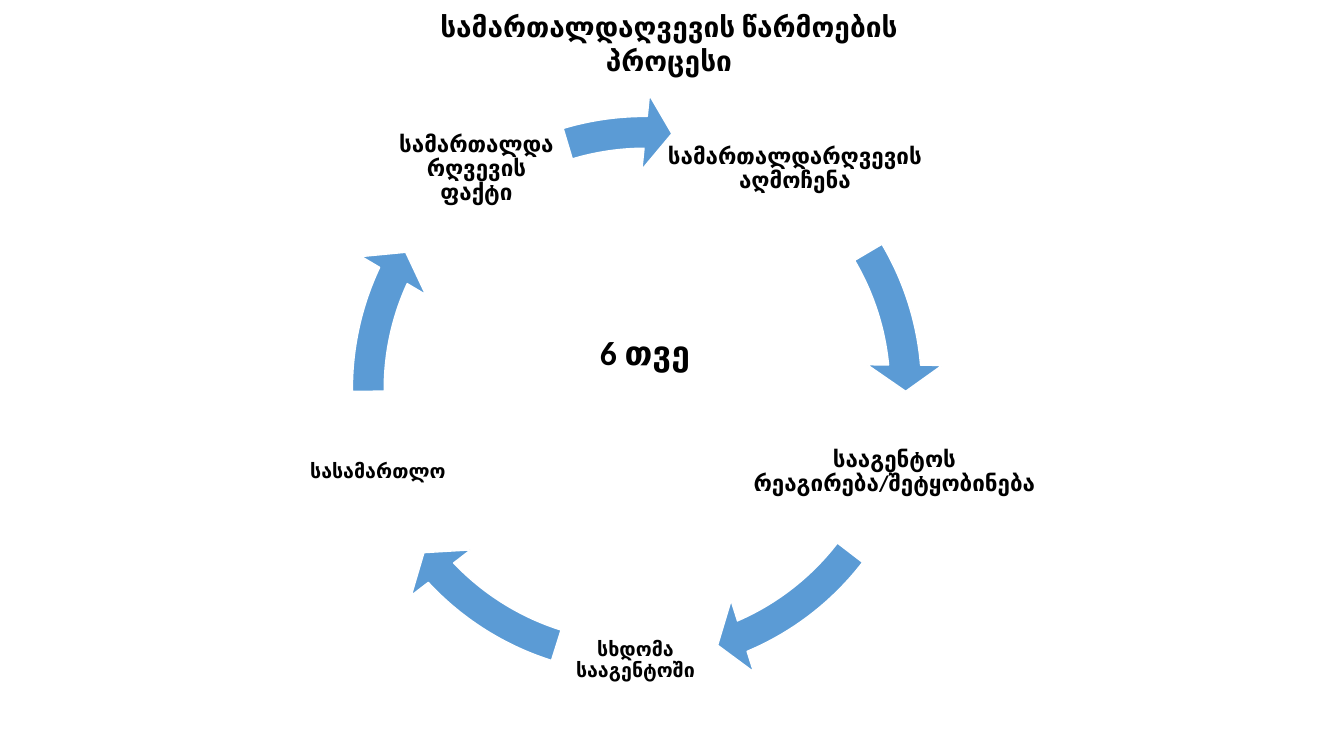
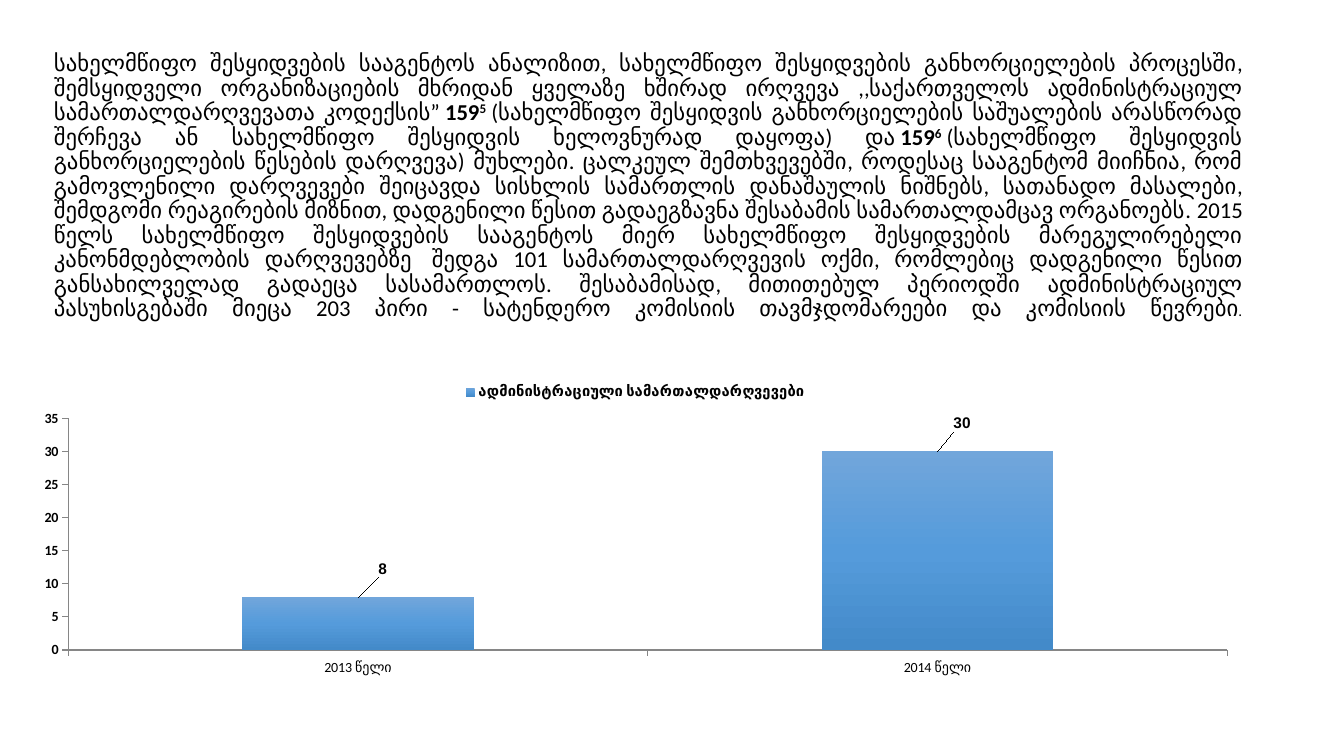
from copy import deepcopy

from lxml import etree
from pptx import Presentation
from pptx.chart.data import CategoryChartData
from pptx.dml.color import RGBColor
from pptx.enum.chart import XL_CHART_TYPE, XL_LABEL_POSITION, XL_LEGEND_POSITION, XL_TICK_MARK
from pptx.enum.shapes import MSO_SHAPE
from pptx.enum.text import MSO_ANCHOR, PP_ALIGN
from pptx.oxml.ns import qn
from pptx.util import Emu, Pt

COLUMNS = XL_CHART_TYPE.COLUMN_CLUSTERED
ABOVE_BAR = XL_LABEL_POSITION.OUTSIDE_END
LEGEND_TOP = XL_LEGEND_POSITION.TOP
TICK_OUT, TICK_NONE = XL_TICK_MARK.OUTSIDE, XL_TICK_MARK.NONE
ARROW = MSO_SHAPE.CIRCULAR_ARROW
TOP, MIDDLE = MSO_ANCHOR.TOP, MSO_ANCHOR.MIDDLE
CENTER, JUSTIFY = PP_ALIGN.CENTER, PP_ALIGN.JUSTIFY

EMU_PER_PX = 914400 / 100.8
FONT = "Calibri"
BLACK, WHITE, BLUE, GREY = "000000", "FFFFFF", "5B9BD5", "868686"
BAR_GRADIENT = ["71A6DB", "559BDB", "438AC9"]
NBSP = chr(160)


def px(length):
    return Emu(round(length * EMU_PER_PX))


def color(hex_string):
    return RGBColor.from_string(hex_string)


def set_font(font, size, bold=False, name=FONT):
    font.size, font.bold, font.name = Pt(size), bold, name
    font.color.rgb = color(BLACK)


def add_text(page, box, spans, size, bold=False, align=CENTER, anchor=TOP,
             line_spacing=None, inset=None):
    """Spans are a string, or a list of (text, format) pairs."""
    frame = page.shapes.add_textbox(*map(px, box)).text_frame
    frame.word_wrap, frame.vertical_anchor = True, anchor
    if inset is not None:
        frame.margin_left = frame.margin_right = px(inset)
        frame.margin_top = frame.margin_bottom = px(inset)
    para = frame.paragraphs[0]
    para.alignment = align
    if line_spacing:
        para.line_spacing = line_spacing
    for text, style in [(spans, {})] if isinstance(spans, str) else spans:
        if style.get("new_line"):
            para.add_line_break()
        span = para.add_run()
        span.text = text
        set_font(span.font, style.get("size", size), style.get("bold", bold))
        if "raised" in style:
            span.font._element.set("baseline", str(style["raised"] * 1000))
        if style.get("new_line"):
            # The break takes the format of the span that follows it
            span._r.getprevious().append(deepcopy(span.font._element))


def add_cycle_arrow(page, box, start, end):
    """Angles are degrees, clockwise from three o'clock."""
    arrow = page.shapes.add_shape(ARROW, *map(px, box))
    arrow.shadow.inherit = False
    arrow.fill.solid()
    arrow.fill.fore_color.rgb = color(BLUE)
    arrow.line.color.rgb = color(WHITE)
    arrow.line.width = Pt(1)
    unit = 0.6  # adjustment value of one degree
    for index, value in enumerate([0.052, 5.6 * unit, end * unit, start * unit, 0.061]):
        arrow.adjustments[index] = value


def add_cycle(page, box):
    left, top, size = box
    # Arrows: start, end, shift from the ring
    for start, end, right, down in [(329.43, 354.9, 0, 0), (37.55, 66.92, 0, 0),
                                    (107.48, 136.86, 0, 0), (179.51, 204.98, 0, 0),
                                    (253.3, 270.15, 8, 12)]:
        add_cycle_arrow(page, (left + right, top + down, size, size), start, end)
    # Steps: text, left and top within the ring, width, text size
    for text, right, down, width, points in [
            ("სამართალდარღვევის აღმოჩენა", 332, 5, 264, 16),
            ("სააგენტოს რეაგირება/შეტყობინება", 413, 308, 301, 16),
            ("სხდომა სააგენტოში", 223, 496, 163, 14),
            ("სასამართლო", -69, 308, 232, 14),
            ("სამართალდარღვევის ფაქტი", 64, 5, 163, 16)]:
        add_text(page, (left + right, top + down, width, 163), text, points, bold=True,
                 anchor=MIDDLE, line_spacing=0.9, inset=2)
    # Time limit in the middle
    add_text(page, (left + 235, top + 244, 158, 50), "6 თვე", 24, bold=True)


def set_layout(parent, index, **values):
    """Place a chart part by fractions of the chart."""
    for old in parent.findall(qn("c:layout")):
        parent.remove(old)
    layout = etree.Element(qn("c:layout"))
    manual = etree.SubElement(layout, qn("c:manualLayout"))
    for tag, value in values.items():
        etree.SubElement(manual, qn("c:" + tag)).set("val", str(value))
    parent.insert(index, layout)


def fill_gradient(series, stops):
    fill = series.format.fill
    fill.gradient()
    fill.gradient_angle = 270
    stop_list = next(series._element.iter(qn("a:gsLst")))
    stop_list.insert(1, deepcopy(stop_list[0]))
    for index, (stop, shade) in enumerate(zip(fill.gradient_stops, stops)):
        stop.color.rgb = color(shade)
        stop.position = index / (len(stops) - 1)


def add_offence_chart(page, box):
    chart_data = CategoryChartData()
    chart_data.categories = ["2013 წელი", "2014 წელი"]
    chart_data.add_series("ადმინისტრაციული სამართალდარღვევები", [8, 30])
    chart = page.shapes.add_chart(COLUMNS, *map(px, box), chart_data).chart
    set_font(chart.font, 10)
    chart.has_title = False
    chart.has_legend = True
    chart.legend.position = LEGEND_TOP
    chart.legend.include_in_layout = False
    set_font(chart.legend.font, 10.5, bold=True)
    # Axes
    for axis, bold in [(chart.category_axis, False), (chart.value_axis, True)]:
        axis.has_major_gridlines = False
        axis.major_tick_mark, axis.minor_tick_mark = TICK_OUT, TICK_NONE
        axis.format.line.color.rgb = color(GREY)
        set_font(axis.tick_labels.font, 10, bold=bold)
    chart.value_axis.minimum_scale, chart.value_axis.maximum_scale = 0, 35
    chart.value_axis.major_unit = 5
    plot_area = next(chart._chartSpace.iter(qn("c:plotArea")))
    set_layout(plot_area, 0, layoutTarget="inner", xMode="edge", yMode="edge",
               x=0.04, y=0.15, w=0.94, h=0.75)
    # Bars and their values
    plot = chart.plots[0]
    plot.gap_width, plot.vary_by_categories = 150, False
    series = plot.series[0]
    fill_gradient(series, BAR_GRADIENT)
    for index in range(2):
        label = series.points[index].data_label
        set_font(label.font, 11, bold=True, name="Arial")
        label.position = ABOVE_BAR
    for label_element in series._element.iter(qn("c:dLbl")):
        set_layout(label_element, 1, x=0.02, y=-0.05)


def build_process(page):
    add_cycle(page, (331, 83, 612))
    add_text(page, (407, 5, 524, 78), "სამართალდაღვევის წარმოების პროცესი", 20, bold=True)


def build_analysis(page):
    article = ("159", {"bold": True})
    add_text(page, (44, 40, 1208, 310), [
        ("სახელმწიფო შესყიდვების სააგენტოს ანალიზით, სახელმწიფო შესყიდვების განხორციელების "
         "პროცესში, შემსყიდველი ორგანიზაციების მხრიდან ყველაზე ხშირად ირღვევა ,,საქართველოს "
         f"ადმინისტრაციულ სამართალდარღვევათა კოდექსის”{NBSP}", {}),
        article, ("5", {"bold": True, "raised": 30}),
        (f"{NBSP}(სახელმწიფო შესყიდვის განხორციელების საშუალების არასწორად შერჩევა ან "
         f"სახელმწიფო შესყიდვის ხელოვნურად დაყოფა) და{NBSP}", {}),
        article, ("6", {"bold": True, "raised": 30}),
        (f"{NBSP}(სახელმწიფო შესყიდვის განხორციელების წესების დარღვევა) მუხლები. ცალკეულ "
         "შემთხვევებში, როდესაც სააგენტომ მიიჩნია, რომ გამოვლენილი დარღვევები შეიცავდა "
         "სისხლის სამართლის დანაშაულის ნიშნებს, სათანადო მასალები, შემდგომი რეაგირების "
         "მიზნით, დადგენილი წესით გადაეგზავნა შესაბამის სამართალდამცავ ორგანოებს. 2015 წელს "
         "სახელმწიფო შესყიდვების სააგენტოს მიერ სახელმწიფო შესყიდვების მარეგულირებელი "
         f"კანონმდებლობის დარღვევებზე{NBSP} შედგა 101 სამართალდარღვევის ოქმი, რომლებიც "
         "დადგენილი წესით განსახილველად გადაეცა სასამართლოს. შესაბამისად, მითითებულ პერიოდში "
         "ადმინისტრაციულ პასუხისგებაში მიეცა 203 პირი - სატენდერო კომისიის თავმჯდომარეები "
         "და კომისიის წევრები", {}),
        (".", {"size": 10.8}), (NBSP, {"size": 10.8, "new_line": True}),
    ], 16.2, align=JUSTIFY, anchor=MIDDLE, line_spacing=0.9)
    add_offence_chart(page, (19, 372, 1233, 309))


def main():
    deck = Presentation()
    deck.slide_width, deck.slide_height = px(1344), px(756)
    for build in (build_process, build_analysis):
        build(deck.slides.add_slide(deck.slide_layouts[6]))
    deck.save("out.pptx")


if __name__ == "__main__":
    main()
